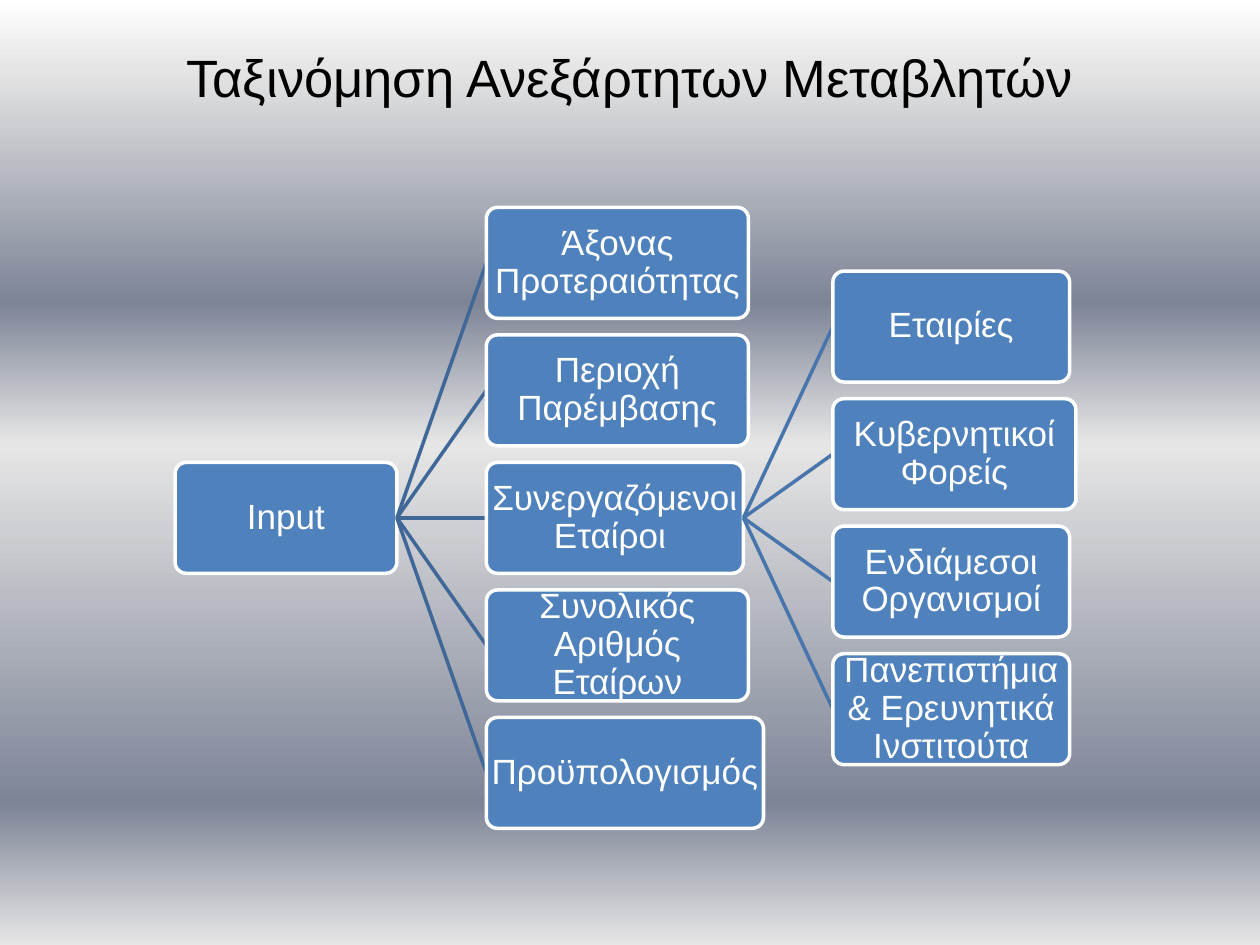
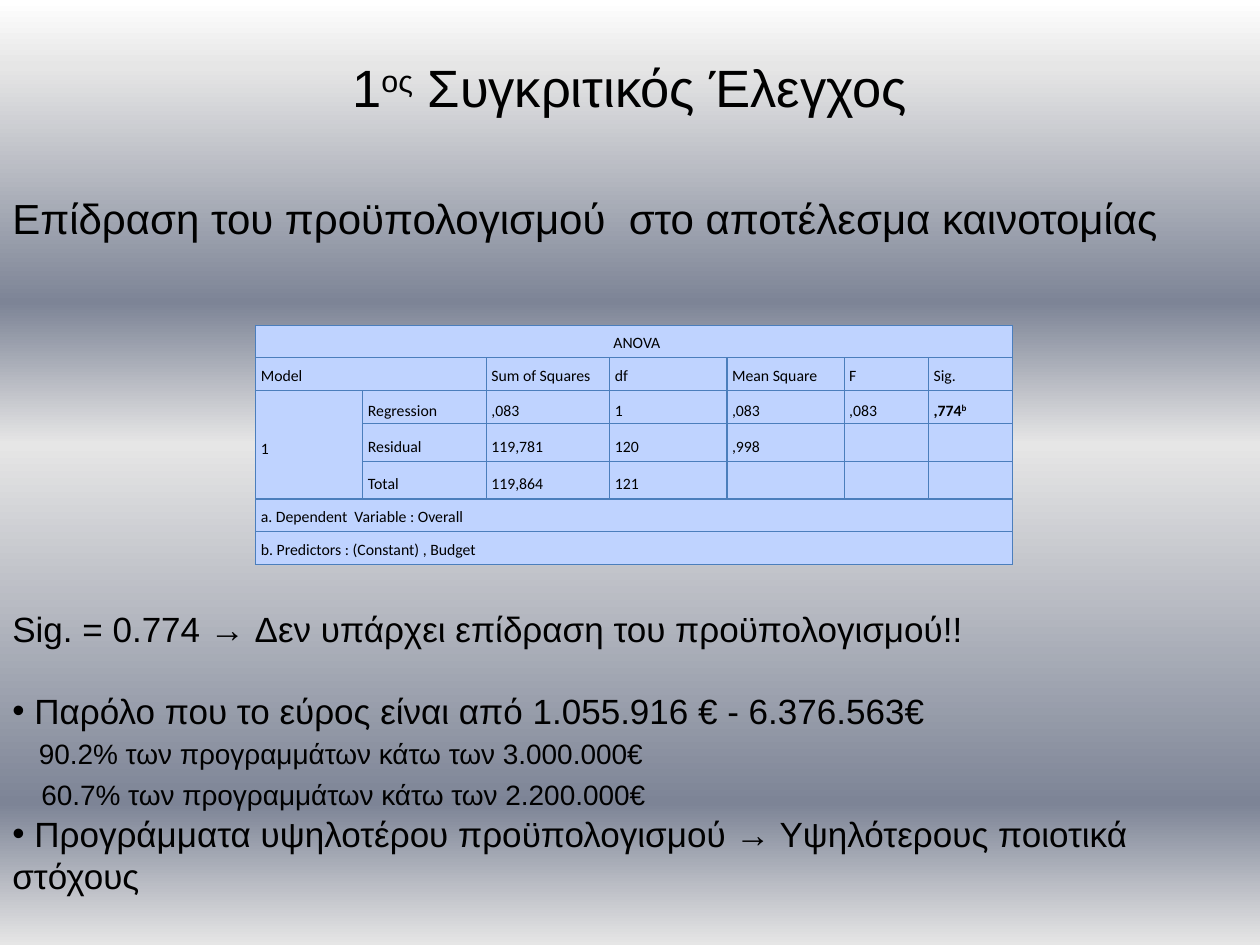
"""Build two slides: a tree of independent variables and an ANOVA comparison."""
from lxml.etree import SubElement
from pptx import Presentation
from pptx.dml.color import RGBColor
from pptx.enum.shapes import MSO_CONNECTOR, MSO_SHAPE
from pptx.enum.text import MSO_ANCHOR as ANCHOR, PP_ALIGN as ALIGN
from pptx.oxml.ns import qn
from pptx.util import Inches, Pt

BLACK = RGBColor(0x00, 0x00, 0x00)
WHITE = RGBColor(0xFF, 0xFF, 0xFF)
NODE_BLUE = RGBColor(0x4F, 0x81, 0xBD)
FIRST_LINK = RGBColor(0x3F, 0x67, 0x97)
SECOND_LINK = RGBColor(0x48, 0x75, 0xAC)
CELL_BLUE = RGBColor(0xBF, 0xD3, 0xFF)
BORDER_BLUE = RGBColor(0x4B, 0x7E, 0xBC)
SILVER = RGBColor(0xE6, 0xE6, 0xE6)
STEEL = RGBColor(0x7D, 0x84, 0x96)
BACKDROP = [(0, WHITE), (7, SILVER), (32, STEEL), (47, SILVER), (85, STEEL), (100, SILVER)]


def write(frame, text, size=20, font="Arial", color=BLACK, bold=False, align=ALIGN.LEFT,
          indent=0, bullet=None, before=0, after=0, spacing=None):
    """Add a paragraph; text between ^ marks is superscript."""
    frame.word_wrap = True
    para = frame.paragraphs[0] if not frame.text else frame.add_paragraph()
    para.alignment, para.line_spacing = align, spacing
    para.space_before, para.space_after = Pt(before), Pt(after)
    properties = para._p.get_or_add_pPr()
    properties.set("marL", str(Inches(indent)))
    properties.set("indent", "0")
    if bullet:
        SubElement(properties, qn("a:buFont"), typeface="Arial")
        SubElement(properties, qn("a:buChar"), char=bullet)
    for position, part in enumerate(text.split("^")):
        span = para.add_run()
        span.text = part
        span.font.size, span.font.name, span.font.bold = Pt(size), font, bold
        span.font.color.rgb = color
        if position % 2:
            span._r.get_or_add_rPr().set("baseline", "30000")


deck = Presentation()
deck.slide_width, deck.slide_height = Inches(10), Inches(7.5)
pages = []
for title, top in [("Ταξινόμηση Ανεξάρτητων Μεταβλητών", 0.31),
                   ("1^ος^ Συγκριτικός Έλεγχος", 0.39)]:
    page = deck.slides.add_slide(deck.slide_layouts[6])
    fill = page.background.fill
    fill.gradient()
    fill.gradient_angle = 270
    stops = page.element.find(".//" + qn("a:gsLst"))
    for stop in list(stops):
        stops.remove(stop)
    for percent, color in BACKDROP:
        stop = SubElement(stops, qn("a:gs"), pos=str(percent * 1000))
        SubElement(stop, qn("a:srgbClr"), val=str(color))
    box = page.shapes.add_textbox(0, Inches(top), Inches(10), Inches(0.61))
    write(box.text_frame, title, size=30, align=ALIGN.CENTER)
    pages.append(page)
tree_page, anova_page = pages

NODE_HEIGHT = 0.88
PITCH = NODE_HEIGHT * 1.15
MIDDLE_TOP = 3.67
LEVELS = [
    (1.39, None, None, [("Input", 1.76)]),
    (3.86, "Input", FIRST_LINK, [
        ("Άξονας Προτεραιότητας", 2.08), ("Περιοχή Παρέμβασης", 2.08),
        ("Συνεργαζόμενοι Εταίροι ", 2.04), ("Συνολικός Αριθμός Εταίρων", 2.08),
        ("Προϋπολογισμός", 2.2)]),
    (6.61, "Συνεργαζόμενοι Εταίροι ", SECOND_LINK, [
        ("Εταιρίες", 1.88), ("Κυβερνητικοί Φορείς", 1.93), ("Ενδιάμεσοι Οργανισμοί", 1.88),
        ("Πανεπιστήμια & Ερευνητικά Ινστιτούτα", 1.88)]),
]
nodes = {}
for left, parent, link_color, members in LEVELS:
    for index, (label, width) in enumerate(members):
        top = MIDDLE_TOP + (index - (len(members) - 1) / 2) * PITCH
        node = tree_page.shapes.add_shape(MSO_SHAPE.ROUNDED_RECTANGLE, Inches(left), Inches(top),
                                          Inches(width), Inches(NODE_HEIGHT))
        node.adjustments[0] = 0.1
        node.shadow.inherit = False
        node.fill.solid()
        node.fill.fore_color.rgb = NODE_BLUE
        node.line.color.rgb, node.line.width = WHITE, Pt(2)
        frame = node.text_frame
        frame.margin_left = frame.margin_right = Inches(0.01)
        frame.margin_top = frame.margin_bottom = Inches(0.01)
        frame.vertical_anchor = ANCHOR.MIDDLE
        write(frame, label, color=WHITE, align=ALIGN.CENTER, spacing=0.9)
        nodes[label] = node
        if parent:
            link = tree_page.shapes.add_connector(MSO_CONNECTOR.STRAIGHT, 0, 0, 0, 0)
            link.begin_connect(nodes[parent], 3)
            link.end_connect(node, 1)
            link.line.color.rgb, link.line.width = link_color, Pt(2)
            SubElement(link.element.spPr, qn("a:effectLst"))
            node.element.addprevious(link.element)

box = anova_page.shapes.add_textbox(0, Inches(1.48), Inches(10), Inches(0.91))
write(box.text_frame, "Επίδραση του προϋπολογισμού  στο αποτέλεσμα καινοτομίας", size=24)

COLUMN_WIDTHS = [0.85, 0.98, 0.98, 0.93, 0.93, 0.67, 0.67]
ROW_HEIGHTS = [0.26, 0.26, 0.26, 0.3, 0.3, 0.26, 0.26]
ANOVA_ROWS = [
    ["ANOVA"],
    ["Model", "", "Sum of Squares", "df", "Mean Square", "F", "Sig."],
    ["1", "Regression", ",083", "1", ",083", ",083", ",774^b^"],
    ["", "Residual", "119,781", "120", ",998"],
    ["", "Total", "119,864", "121"],
    ["a. Dependent  Variable : Overall"],
    ["b. Predictors : (Constant) , Budget"],
]
MERGES = [((0, 0), (0, 6)), ((1, 0), (1, 1)), ((2, 0), (4, 0)), ((5, 0), (5, 6)), ((6, 0), (6, 6))]
table = anova_page.shapes.add_table(7, 7, Inches(2.03), Inches(2.58), Inches(6.02),
                                    Inches(1.88)).table
table.first_row = table.horz_banding = False
for column, width in zip(table.columns, COLUMN_WIDTHS):
    column.width = Inches(width)
for row, height in zip(table.rows, ROW_HEIGHTS):
    row.height = Inches(height)
for start, end in MERGES:
    table.cell(*start).merge(table.cell(*end))
for row_index, texts in enumerate(ANOVA_ROWS):
    for column_index in range(len(COLUMN_WIDTHS)):
        cell = table.cell(row_index, column_index)
        text = texts[column_index] if column_index < len(texts) else ""
        cell.margin_left = cell.margin_right = cell.margin_top = cell.margin_bottom = 0
        cell.vertical_anchor = ANCHOR.MIDDLE if 2 <= row_index <= 4 else ANCHOR.TOP
        write(cell.text_frame, text, size=9, font="Calibri", bold="^" in text, indent=0.04,
              align=ALIGN.JUSTIFY if row_index else ALIGN.CENTER, spacing=Pt(16))
        properties = cell._tc.get_or_add_tcPr()
        for side in ("a:lnL", "a:lnR", "a:lnT", "a:lnB"):
            border = SubElement(properties, qn(side), w=str(Pt(0.75)))
            SubElement(SubElement(border, qn("a:solidFill")), qn("a:srgbClr"), val=str(BORDER_BLUE))
        cell.fill.solid()
        cell.fill.fore_color.rgb = CELL_BLUE

box = anova_page.shapes.add_textbox(0, Inches(4.77), Inches(10), Inches(2.76))
for text, layout in [
    ("Sig. = 0.774 → Δεν υπάρχει επίδραση του προϋπολογισμού!!", {"after": 23}),
    (" Παρόλο που το εύρος είναι από 1.055.916 € - 6.376.563€", {"bullet": "•"}),
    ("90.2% των προγραμμάτων κάτω των 3.000.000€", {"size": 16, "indent": 0.21, "before": 3}),
    ("60.7% των προγραμμάτων κάτω των 2.200.000€",
     {"size": 16, "indent": 0.23, "before": 4, "after": 1}),
    (" Προγράμματα υψηλοτέρου προϋπολογισμού → Υψηλότερους ποιοτικά στόχους", {"bullet": "•"}),
]:
    write(box.text_frame, text, **layout)

deck.save("out.pptx")
